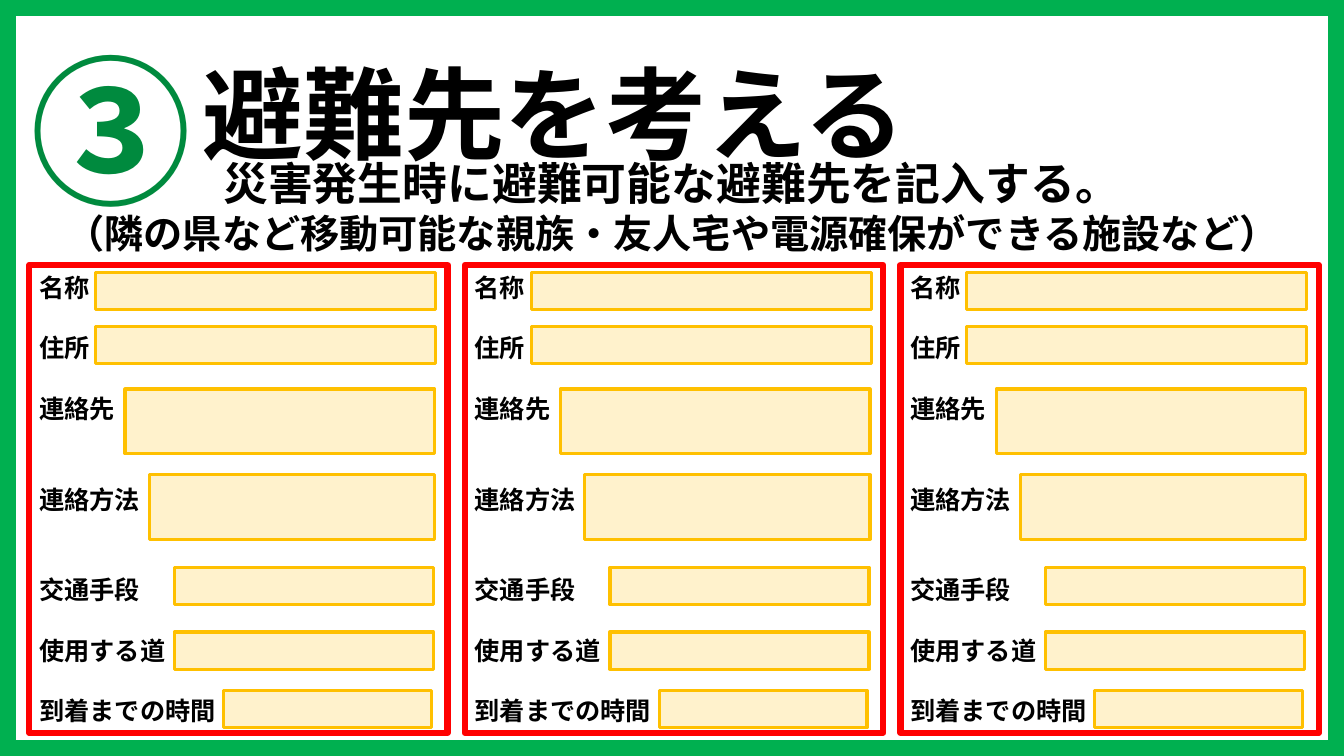
from lxml import etree
from pptx import Presentation, util as u
from pptx.dml.color import RGBColor
from pptx.enum import shapes, text
from pptx.oxml.ns import qn

STEP = "③"
TITLE = "避難先を考える"
GUIDE = [
    ("災害発生時に避難可能な避難先を記入する。", 32),
    ("（隣の県など移動可能な親族・友人宅や電源確保ができる施設など）", 28),
]
# label, blank lines above, then left (from card), top, width, height of its field
FIELDS = [
    ("名称", 0, 0.66, 2.7, 3.37, 0.37),
    ("住所", 1, 0.66, 3.24, 3.37, 0.37),
    ("連絡先", 1, 0.95, 3.86, 3.07, 0.64),
    ("連絡方法", 2, 1.19, 4.71, 2.83, 0.64),
    ("交通手段", 2, 1.44, 5.63, 2.57, 0.37),
    ("使用する道", 1, 1.44, 6.27, 2.57, 0.37),
    ("到着までの時間", 1, 1.93, 6.85, 2.06, 0.37),
]
CARDS = 3
CARD_LEFT, CARD_TOP, CARD_WIDTH, CARD_HEIGHT = 0.29, 2.63, 4.15, 4.64
CARD_STEP = 4.32
WIDTH, HEIGHT = 13.33, 7.5

THEME = {
    "font": "Noto Sans CJK JP",
    "ink": "000000", "step": "008A3E", "border": "00B050",
    "card": "FF0000", "field": "FFF2CC", "field_line": "FFC000",
    "step_size": 115, "title_size": 72, "label_size": 18,
    "leading": 1.2, "drop": 0.09,
}


def color(name):
    return RGBColor.from_string(THEME[name])


def write(frame, lines, ink="ink", align=text.PP_ALIGN.LEFT,
          anchor=text.MSO_ANCHOR.TOP, drop=THEME["drop"]):
    frame.word_wrap = True
    frame.vertical_anchor = anchor
    frame.margin_top = u.Inches(0.05 + lines[0][1] * drop / 72)
    for index, (words, size, gap) in enumerate(lines):
        paragraph = frame.add_paragraph() if index else frame.paragraphs[0]
        leading = size * THEME["leading"]
        paragraph.alignment = align
        paragraph.line_spacing = u.Pt(leading)
        paragraph.space_before = u.Pt(gap * leading)
        run = paragraph.add_run()
        run.text = words
        run.font.name = THEME["font"]
        run.font.size = u.Pt(size)
        run.font.bold = True
        run.font.color.rgb = color(ink)
        east_asian = etree.SubElement(run.font._element, qn("a:ea"))
        east_asian.set("typeface", THEME["font"])


def add_text(box, lines, **style):
    write(slide.shapes.add_textbox(*map(u.Inches, box)).text_frame, lines, **style)


def add_box(box, line, weight, fill=None, kind=shapes.MSO_SHAPE.RECTANGLE):
    shape = slide.shapes.add_shape(kind, *map(u.Inches, box))
    shape.shadow.inherit = False
    if fill:
        shape.fill.solid()
        shape.fill.fore_color.rgb = color(fill)
    else:
        shape.fill.background()
    shape.line.color.rgb = color(line)
    shape.line.width = u.Pt(weight)
    return shape


deck = Presentation()
deck.slide_width, deck.slide_height = u.Inches(WIDTH), u.Inches(HEIGHT)
slide = deck.slides.add_slide(deck.slide_layouts[6])

add_text((-0.04, 0.12, 2.29, 2.04), [(STEP, THEME["step_size"], 0)],
         ink="step", align=text.PP_ALIGN.CENTER)
border = add_box((0, 0, WIDTH, HEIGHT), "border", 1, "border", shapes.MSO_SHAPE.FRAME)
border.adjustments[0] = 0.02
add_text((0, 1.45, WIDTH, 1.11), [(words, size, 0) for words, size in GUIDE],
         align=text.PP_ALIGN.CENTER)
add_text((1.91, 0.37, 10.32, 1.31), [(TITLE, THEME["title_size"], 0)])

labels = [(label, THEME["label_size"], gap) for label, gap, *_ in FIELDS]
for number in range(CARDS):
    left = CARD_LEFT + number * CARD_STEP
    card = add_box((left, CARD_TOP, CARD_WIDTH, CARD_HEIGHT), "card", 4.5)
    write(card.text_frame, labels, anchor=text.MSO_ANCHOR.MIDDLE, drop=0)
    for _, _, indent, top, width, height in FIELDS:
        add_box((left + indent, top, width, height), "field_line", 2.25, "field")

deck.save("out.pptx")
